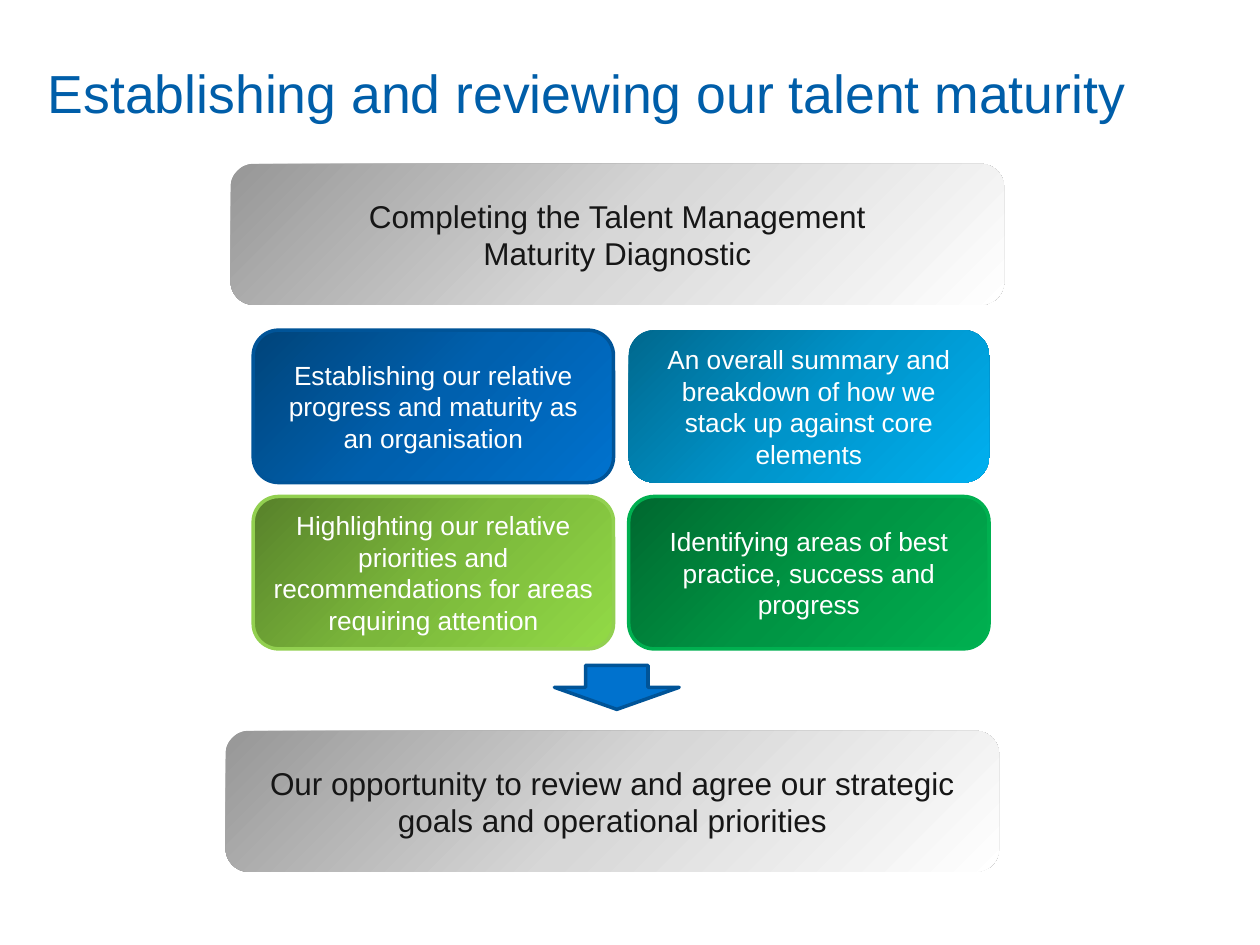
"""Build the talent maturity slide."""
import copy

import pptx
import pptx.dml.color
import pptx.enum.shapes
import pptx.enum.text
import pptx.oxml.ns
import pptx.util

Inches, Pt = pptx.util.Inches, pptx.util.Pt
SHAPE = pptx.enum.shapes.MSO_SHAPE
ALIGN = pptx.enum.text.PP_ALIGN
MIDDLE = pptx.enum.text.MSO_ANCHOR.MIDDLE

TITLE = "Establishing and reviewing our talent maturity"
GREYS = ("979797", "D7D7D7", "FFFFFF")
BANNERS = [
    (1.83, 1.3, ["Completing the Talent Management", "Maturity Diagnostic"]),
    (1.79, 5.8, ["Our opportunity to review and agree our strategic goals and operational priorities"]),
]
CARDS = [
    ("Establishing our relative progress and maturity as an organisation",
     ("00447A", "0060AE", "0072CE"), "005498"),
    ("An overall summary and breakdown of how we stack up against core elements",
     ("00688E", "0094CA", "00B0F0"), None),
    ("Highlighting our relative priorities and recommendations for areas requiring attention",
     ("57812A", "7BB73B", "92DA46"), "92D050"),
    ("Identifying areas of best practice, success and progress",
     ("00682F", "009443", "00B050"), "00B050"),
]
CARD_LEFT, CARD_TOP, CARD_W, CARD_H = 2.01, 2.62, 2.86, 1.21
STEP_X, STEP_Y = 2.98, 1.32


def rgb(value):
    return pptx.dml.color.RGBColor.from_string(value)


def style_text(p, size, color, align):
    p.alignment = align
    p.font.size, p.font.name = Pt(size), "Arial"
    p.font.color.rgb = rgb(color)


def add_shape(slide, kind, box, line):
    sp = slide.shapes.add_shape(kind, *map(Inches, box))
    sp.shadow.inherit = False
    if line:
        sp.line.color.rgb = rgb(line)
        sp.line.width = Pt(2)
    else:
        sp.line.fill.background()
    return sp


def fill_gradient(sp, colors):
    sp.fill.gradient()
    sp.fill.gradient_angle = 315
    stops = next(sp.element.iter(pptx.oxml.ns.qn("a:gsLst")))
    stops.insert(1, copy.deepcopy(stops[0]))
    for stop, position, color in zip(sp.fill.gradient_stops, (0, 0.5, 1), colors):
        stop.position = position
        stop.color.rgb = rgb(color)


def add_panel(slide, box, lines, colors, line, size, text_color):
    sp = add_shape(slide, SHAPE.ROUNDED_RECTANGLE, box, line)
    fill_gradient(sp, colors)
    tf = sp.text_frame
    tf.word_wrap, tf.vertical_anchor = True, MIDDLE
    tf.text = "\n".join(lines)
    for p in tf.paragraphs:
        style_text(p, size, text_color, ALIGN.CENTER)


def add_title(slide):
    title = slide.shapes.title
    title.left, title.top, title.width, title.height = map(Inches, (0.28, 0.29, 9.07, 0.94))
    tf = title.text_frame
    tf.text = TITLE
    tf.word_wrap, tf.vertical_anchor = True, MIDDLE
    p = tf.paragraphs[0]
    p.line_spacing = 0.9
    style_text(p, 30.6, "005EA9", ALIGN.LEFT)


def main():
    prs = pptx.Presentation()
    prs.slide_width, prs.slide_height = Inches(10), Inches(7.5)
    slide = prs.slides.add_slide(prs.slide_layouts[5])
    add_title(slide)
    for left, top, lines in BANNERS:
        add_panel(slide, (left, top, 6.14, 1.12), lines, GREYS, None, 18, "161616")
    for i, (text, colors, line) in enumerate(CARDS):
        row, col = divmod(i, 2)
        box = (CARD_LEFT + col * STEP_X, CARD_TOP + row * STEP_Y, CARD_W, CARD_H)
        add_panel(slide, box, [text], colors, line, 15, "FFFFFF")
    arrow = add_shape(slide, SHAPE.RIGHT_ARROW, (4.72, 4.96, 0.35, 0.99), "005498")
    arrow.rotation = 90
    arrow.fill.solid()
    arrow.fill.fore_color.rgb = rgb("0072CE")
    prs.save("out.pptx")


if __name__ == "__main__":
    main()
